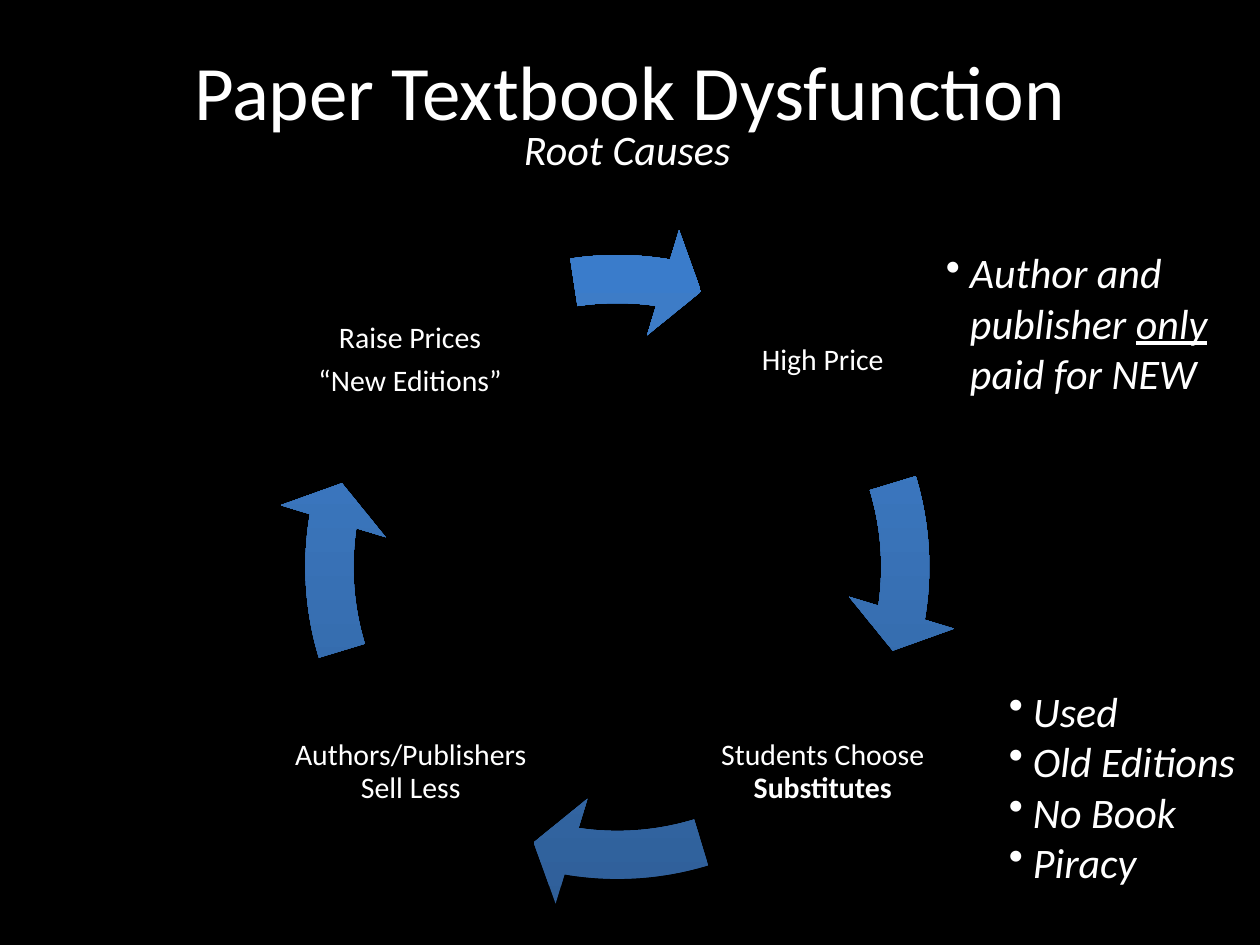
"""Build the textbook price cycle slide."""
from lxml import etree
from pptx import Presentation
from pptx.dml.color import RGBColor
from pptx.enum.shapes import MSO_SHAPE
from pptx.enum.text import MSO_ANCHOR, PP_ALIGN
from pptx.oxml import parse_xml
from pptx.oxml.ns import qn
from pptx.util import Inches, Pt

ARROW = MSO_SHAPE.CIRCULAR_ARROW
CENTER, LEFT = PP_ALIGN.CENTER, PP_ALIGN.LEFT
MIDDLE, TOP = MSO_ANCHOR.MIDDLE, MSO_ANCHOR.TOP
DRAWING_NS = "http://schemas.openxmlformats.org/drawingml/2006/main"

COLORS = {"background": "000000", "text": "FFFFFF"}
GRADIENT = [(0, "2F5F99"), (80, "3D7CC7"), (100, "3A7CCB")]
FONT = "Calibri"

TITLE = [[[("Paper Textbook Dysfunction", "")]]]
SUBTITLE = [[[("Root Causes", "")]]]
STAGES = [
    ((5.57, 1.9, 1.92, 1.92), [[[("High Price", "")]]]),
    ((5.57, 5.17, 1.92, 1.92),
     [[[("Students Choose ", ""), ("Substitutes", "bold")]]]),
    ((2.3, 5.17, 1.92, 1.92), [[[("Authors/Publishers Sell Less", "")]]]),
    ((1.97, 1.9, 2.57, 1.92),
     [[[("Raise Prices", "")]], [[("“New Editions”", "")]]]),
]
NOTES = [
    ((7.41, 1.91, 2.37, 1.31),
     [[[("Author and ", "")],
       [("publisher ", ""), ("only", "underline"), (" ", "")],
       [("paid for NEW", "")]]]),
    ((7.91, 5.39, 2.03, 1.72),
     [[[(item, "")]] for item in ("Used", "Old Editions", "No Book", "Piracy")]),
]

RING = (2.18, 1.78, 5.44, 5.44)
ARROW_ENDS = [5.49, 59.49, 113.49, 167.49]
ARROW_STARTS = [205.85, 43.85, 97.85, 156.8]


def add_text(page, place, paragraphs, size, align=LEFT, anchor=TOP,
             italic=False, wrap=False, inset=None):
    box = page.shapes.add_textbox(*map(Inches, place))
    frame = box.text_frame
    frame.word_wrap = wrap
    frame.vertical_anchor = anchor
    if inset is not None:
        frame.margin_left = frame.margin_right = Inches(inset)
        frame.margin_top = frame.margin_bottom = Inches(inset)
    for index, lines in enumerate(paragraphs):
        para = frame.add_paragraph() if index else frame.paragraphs[0]
        para.alignment = align
        para.font.name = FONT
        para.font.size = Pt(size)
        para.font.italic = italic
        para.font.color.rgb = RGBColor.from_string(COLORS["text"])
        for number, spans in enumerate(lines):
            if number:
                para.add_line_break()
            for text, style in spans:
                span = para.add_run()
                span.text = text
                if style:
                    setattr(span.font, style, True)
    return frame.paragraphs


def add_bullet(para):
    props = para._p.get_or_add_pPr()
    props.set("marL", str(Inches(0.19)))
    props.set("indent", str(-Inches(0.19)))
    bullet = etree.Element(qn("a:buChar"), char="•")
    props.find(qn("a:defRPr")).addprevious(bullet)


def add_arrow(page, start, end):
    arrow = page.shapes.add_shape(ARROW, *map(Inches, RING))
    for index, value in enumerate((0.07, 4.65, end, start, 0.08)):
        arrow.adjustments[index] = value
    arrow.shadow.inherit = False
    arrow.line.fill.background()
    stops = "".join(
        f'<a:gs pos="{pos * 1000}"><a:srgbClr val="{color}"/></a:gs>'
        for pos, color in GRADIENT)
    fill = parse_xml(
        f'<a:gradFill xmlns:a="{DRAWING_NS}" rotWithShape="1">'
        f'<a:gsLst>{stops}</a:gsLst><a:lin ang="16200000" scaled="0"/></a:gradFill>')
    arrow._element.spPr.find(qn("a:prstGeom")).addnext(fill)


def main():
    deck = Presentation()
    deck.slide_width, deck.slide_height = Inches(10), Inches(7.5)
    page = deck.slides.add_slide(deck.slide_layouts[6])
    page.background.fill.solid()
    page.background.fill.fore_color.rgb = RGBColor.from_string(COLORS["background"])

    for (place, text), start, end in zip(STAGES, ARROW_STARTS, ARROW_ENDS):
        for para in add_text(page, place, text, 17, CENTER, MIDDLE,
                             wrap=True, inset=0.02):
            para.line_spacing = 0.9
            para.space_after = Pt(6)
        add_arrow(page, start, end)

    add_text(page, (0.5, 0.3, 9, 1.25), TITLE, 44, CENTER, wrap=True)
    add_text(page, (4.06, 0.93, 1.95, 0.5), SUBTITLE, 24, italic=True)
    for place, text in NOTES:
        for para in add_text(page, place, text, 24, italic=True):
            add_bullet(para)
    deck.save("out.pptx")


if __name__ == "__main__":
    main()
